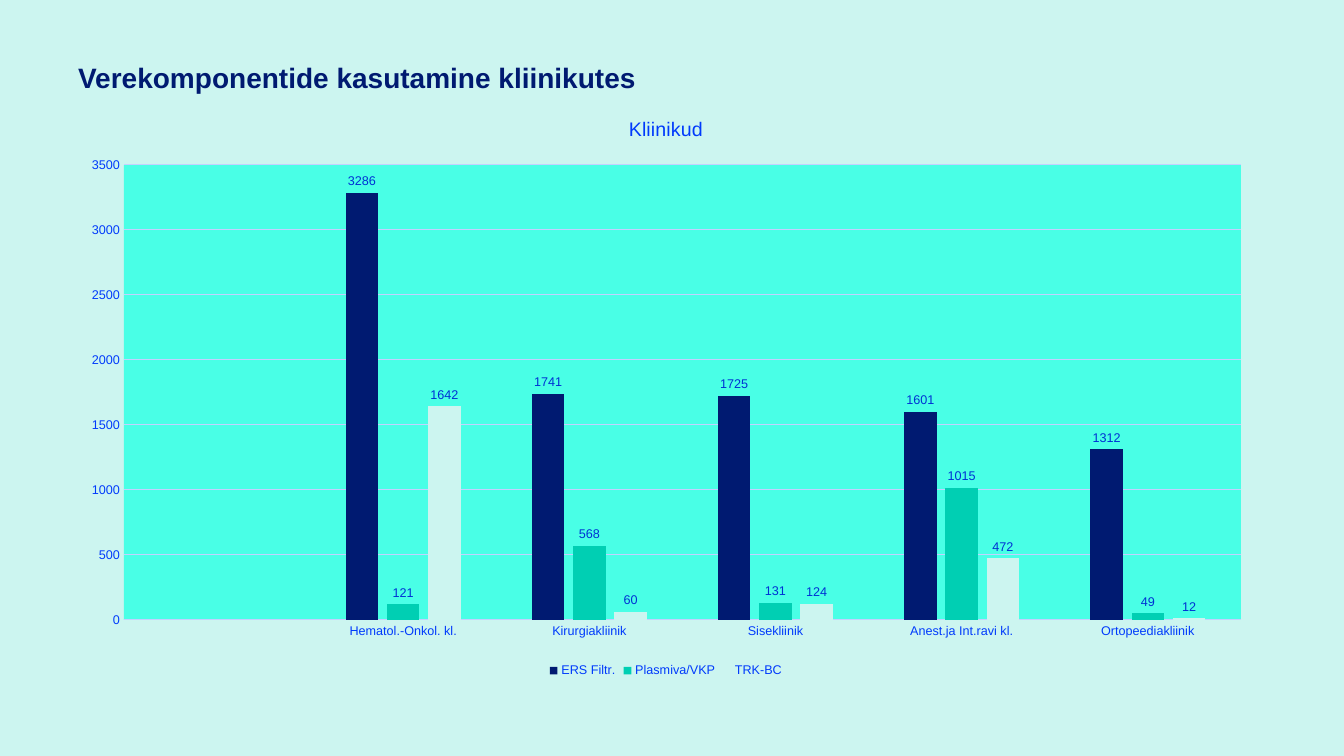
from lxml.etree import SubElement
from pptx import Presentation
from pptx.chart.data import CategoryChartData
from pptx.dml.color import RGBColor
from pptx.enum.chart import XL_CHART_TYPE, XL_LABEL_POSITION, XL_LEGEND_POSITION, XL_TICK_MARK
from pptx.enum.text import MSO_ANCHOR, PP_ALIGN
from pptx.oxml.ns import qn
from pptx.util import Pt

PX = 914400 / 100.8
FONT = "Arial"
COLORS = {
    "background": "CCF5F0",
    "navy": "001A71",
    "teal": "00CFB3",
    "plot": "49FFE6",
    "text": "003AFC",
    "label": "0031D4",
    "grid": "C3D1FF",
}
CLINICS = ["", "Hematol.-Onkol. kl.", "Kirurgiakliinik", "Sisekliinik",
           "Anest.ja Int.ravi kl.", "Ortopeediakliinik"]
COMPONENTS = [
    ("ERS Filtr.", "navy", (None, 3286, 1741, 1725, 1601, 1312)),
    ("Plasmiva/VKP", "teal", (None, 121, 568, 131, 1015, 49)),
    ("TRK-BC", "background", (None, 1642, 60, 124, 472, 12)),
]


def px(length):
    return round(length * PX)


def color(name):
    return RGBColor.from_string(COLORS[name])


def paint(fill, name):
    fill.solid()
    fill.fore_color.rgb = color(name)


def style_font(font, size, name, bold=False):
    font.name = FONT
    font.size = Pt(size)
    font.bold = bold
    font.color.rgb = color(name)


def style_line(line, name):
    line.color.rgb = color(name)
    line.width = Pt(0.75)


class SlideBuilder:
    def __init__(self, deck):
        self.slide = deck.slides.add_slide(deck.slide_layouts[5])
        paint(self.slide.background.fill, "background")

    def title(self, text, left, top, width, height):
        box = self.slide.shapes.title
        box.left, box.top, box.width, box.height = map(px, (left, top, width, height))
        frame = box.text_frame
        frame.text = text
        frame.word_wrap = True
        frame.vertical_anchor = MSO_ANCHOR.TOP
        para = frame.paragraphs[0]
        para.alignment = PP_ALIGN.LEFT
        para.line_spacing = 0.9
        style_font(para.runs[0].font, 20, "navy", bold=True)

    def column_chart(self, heading, categories, series_rows, left, top, width, height):
        data = CategoryChartData()
        data.categories = categories
        for name, _, values in series_rows:
            data.add_series(name, values)
        frame = self.slide.shapes.add_chart(
            XL_CHART_TYPE.COLUMN_CLUSTERED, *map(px, (left, top, width, height)), data)
        chart = frame.chart
        style_font(chart.font, 10, "navy")
        chart.has_title = True
        chart.chart_title.text_frame.text = heading
        style_font(chart.chart_title.text_frame.paragraphs[0].runs[0].font, 14, "text")
        chart.has_legend = True
        chart.legend.position = XL_LEGEND_POSITION.BOTTOM
        chart.legend.include_in_layout = False
        style_font(chart.legend.font, 9, "text")
        self.axes(chart)

        plot = chart.plots[0]
        plot.gap_width = 219
        plot.overlap = -27
        plot.vary_by_categories = False
        for series, (_, fill_name, _) in zip(plot.series, series_rows):
            paint(series.format.fill, fill_name)
            labels = series.data_labels
            labels.show_value = True
            labels.position = XL_LABEL_POSITION.OUTSIDE_END
            style_font(labels.font, 9, "label")
        return frame

    def axes(self, chart):
        for axis in (chart.category_axis, chart.value_axis):
            axis.major_tick_mark = axis.minor_tick_mark = XL_TICK_MARK.NONE
            style_font(axis.tick_labels.font, 9, "text")
        style_line(chart.category_axis.format.line, "grid")
        values = chart.value_axis
        values.minimum_scale, values.maximum_scale, values.major_unit = 0, 3500, 500
        values.format.line.fill.background()
        values.has_major_gridlines = True
        style_line(values.major_gridlines.format.line, "grid")

    def plot_area(self, frame, fill_name, left, top, width, height):
        """Fill the plot area and fix its inner frame, given in px on the slide."""
        area = frame.chart._chartSpace.find(f".//{qn('c:plotArea')}")
        for old in area.findall(qn("c:layout")):
            area.remove(old)
        layout = SubElement(area, qn("c:layout"))
        area.insert(0, layout)
        manual = SubElement(layout, qn("c:manualLayout"))
        settings = {
            "layoutTarget": "inner", "xMode": "edge", "yMode": "edge",
            "x": (px(left) - frame.left) / frame.width,
            "y": (px(top) - frame.top) / frame.height,
            "w": px(width) / frame.width,
            "h": px(height) / frame.height,
        }
        for tag, value in settings.items():
            SubElement(manual, qn(f"c:{tag}")).set("val", str(value))
        properties = SubElement(area, qn("c:spPr"))
        fill = SubElement(properties, qn("a:solidFill"))
        SubElement(fill, qn("a:srgbClr")).set("val", COLORS[fill_name])


def main():
    deck = Presentation()
    deck.slide_width, deck.slide_height = px(1344), px(756)
    page = SlideBuilder(deck)
    page.title("Verekomponentide kasutamine kliinikutes", 68, 59, 1183, 146)
    frame = page.column_chart("Kliinikud", CLINICS, COMPONENTS, 68, 96, 1196, 586)
    page.plot_area(frame, "plot", 124, 165, 1117, 455)
    deck.save("out.pptx")


if __name__ == "__main__":
    main()
